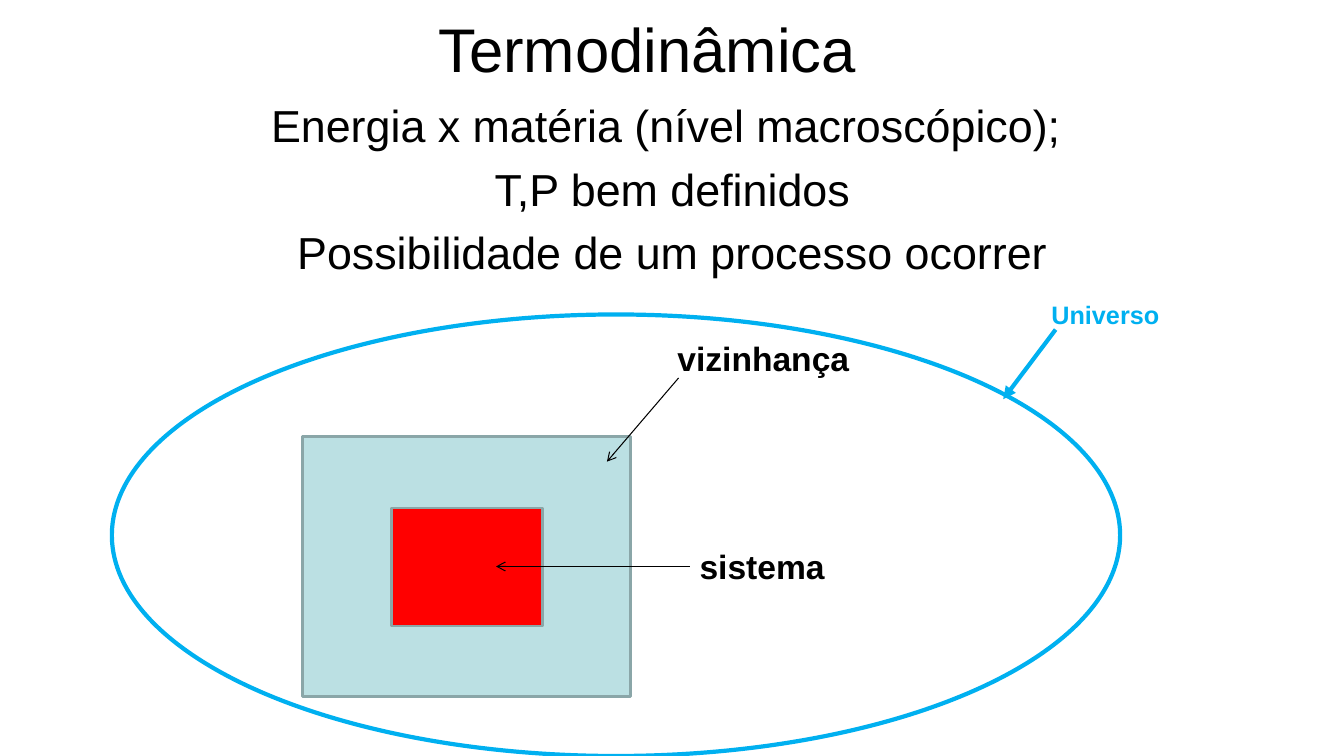
from lxml import etree
from pptx import Presentation
from pptx.dml.color import RGBColor
from pptx.enum.shapes import MSO_CONNECTOR, MSO_SHAPE
from pptx.enum.text import MSO_ANCHOR, MSO_AUTO_SIZE, PP_ALIGN
from pptx.oxml.ns import qn
from pptx.util import Inches, Pt

RECTANGLE, ELLIPSE = MSO_SHAPE.RECTANGLE, MSO_SHAPE.OVAL
STRAIGHT = MSO_CONNECTOR.STRAIGHT
CENTER, LEFT = PP_ALIGN.CENTER, PP_ALIGN.LEFT
MIDDLE = MSO_ANCHOR.MIDDLE
NO_FIT = MSO_AUTO_SIZE.NONE
LEFT_SIDE = 1

COLORS = {"text": "000000", "universe": "00B0F0", "surroundings": "BBE0E3",
          "system": "FF0000", "border": "8AA6A8"}


def color(name):
    return RGBColor.from_string(COLORS[name])


def write(box, lines, size, align, ink="text", bold=False, space=0):
    frame = box.text_frame
    frame.auto_size = NO_FIT
    frame.text = "\n".join(lines)
    for para in frame.paragraphs:
        para.alignment = align
        para.space_before = Pt(space)
        para.font.name = "Arial"
        para.font.size = Pt(size)
        para.font.bold = bold
        para.font.color.rgb = color(ink)


deck = Presentation()
deck.slide_width, deck.slide_height = Inches(13.33), Inches(7.5)
page = deck.slides.add_slide(deck.slide_layouts[5])
shapes = page.shapes

# Title
title = shapes.title
title.left, title.top = Inches(2.17), Inches(-0.33)
title.width, title.height = Inches(8.5), Inches(1.61)
title.text_frame.vertical_anchor = MIDDLE
write(title, ["Termodinâmica"], 44, CENTER)

# Topics under the title
topics = shapes.add_textbox(Inches(1.67), Inches(0.92), Inches(10), Inches(1.92))
topics.text_frame.word_wrap = True
write(topics, ["Energia x matéria (nível macroscópico); ", "T,P bem definidos",
               "Possibilidade de um processo ocorrer"], 32, CENTER, space=7)

# Nested regions: surroundings, system, universe
regions = [
    (RECTANGLE, (3, 4.33, 3.25, 2.58), "surroundings", "border", 2),
    (RECTANGLE, (3.88, 5.04, 1.5, 1.17), "system", "border", 2),
    (ELLIPSE, (1.11, 3.12, 10, 4.38), None, "universe", 3),
]
for kind, place, fill, border, weight in regions:
    region = shapes.add_shape(kind, *map(Inches, place))
    region.shadow.inherit = False
    if fill:
        region.fill.solid()
        region.fill.fore_color.rgb = color(fill)
    else:
        region.fill.background()
    region.line.color.rgb = color(border)
    region.line.width = Pt(weight)

# Labels, each with an arrow to its region
labels = [
    ("vizinhança", (6.62, 3.3, 1.92, 0.51), 24, "text",
     (6.73, 3.75, 6.02, 4.58), 0.75, "arrow"),
    ("sistema", (6.84, 5.37, 1.46, 0.5), 24, "text",
     (6.84, 5.62, 4.92, 5.62), 0.75, "arrow"),
    ("Universo", (10.33, 2.92, 1.28, 0.4), 18, "universe",
     (10.47, 3.27, 9.95, 3.96), 3, "triangle"),
]
for name, place, size, ink, ends, weight, head in labels:
    label = shapes.add_textbox(*map(Inches, place))
    label.text_frame.word_wrap = False
    write(label, [name], size, LEFT, ink, bold=True)

    arrow = shapes.add_connector(STRAIGHT, *map(Inches, ends))
    if name == "sistema":
        arrow.begin_connect(label, LEFT_SIDE)
    arrow.line.color.rgb = color(ink)
    arrow.line.width = Pt(weight)
    etree.SubElement(arrow.line._get_or_add_ln(), qn("a:tailEnd"), type=head)
    etree.SubElement(arrow._element.spPr, qn("a:effectLst"))

deck.save("out.pptx")
